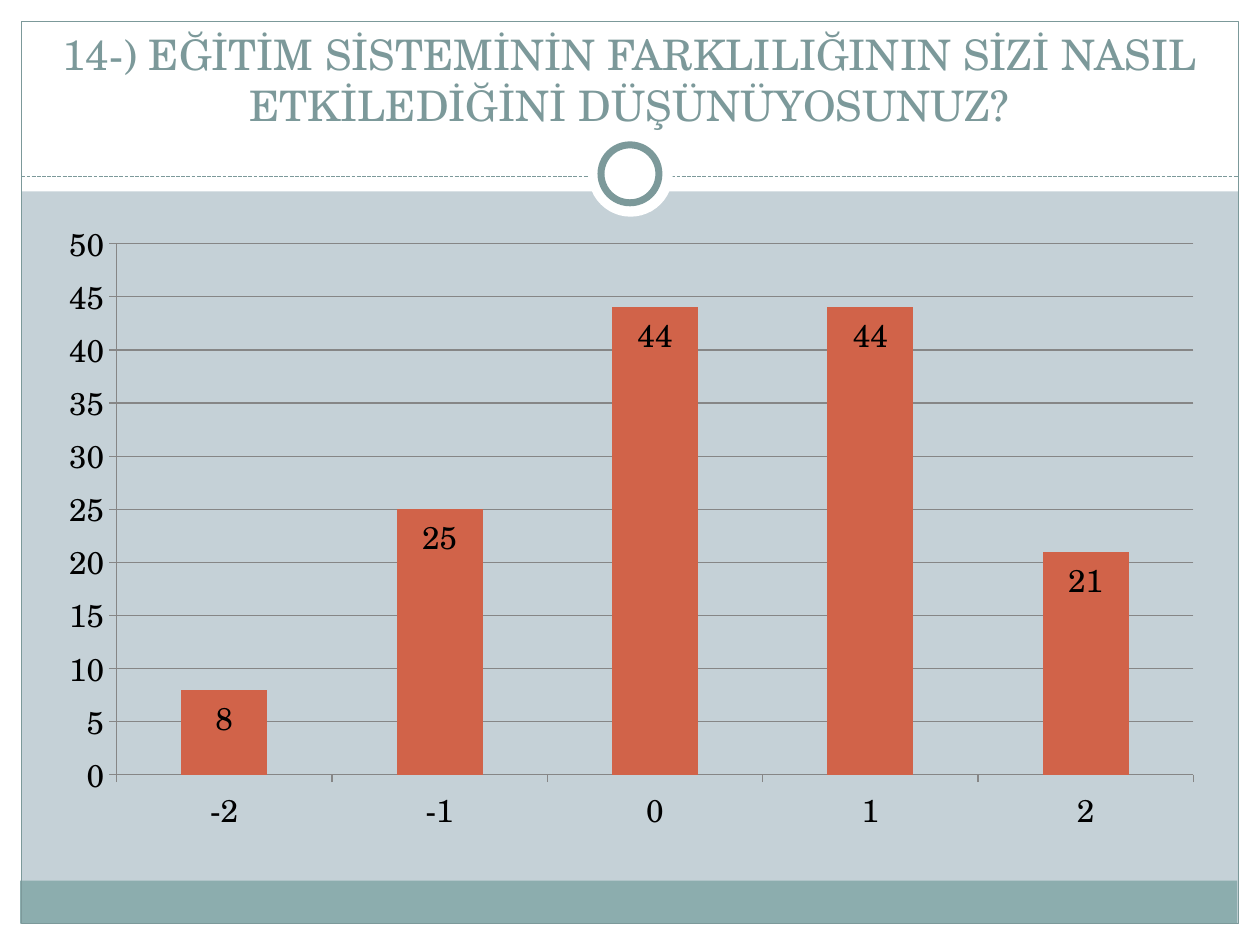
from lxml.etree import SubElement
from pptx import Presentation
from pptx.chart.data import CategoryChartData
from pptx.dml.color import RGBColor
from pptx.enum.chart import XL_CHART_TYPE, XL_LABEL_POSITION, XL_TICK_MARK
from pptx.enum.dml import MSO_LINE
from pptx.enum.shapes import MSO_CONNECTOR, MSO_SHAPE
from pptx.enum.text import MSO_ANCHOR, MSO_AUTO_SIZE, PP_ALIGN
from pptx.oxml import parse_xml
from pptx.oxml.ns import nsdecls, qn
from pptx.util import Pt

PX = 9144  # 100 px to the inch
WIDE, HIGH, EDGE = 1000, 750, 17
FONT = "TeX Gyre Schola"
WHITE = RGBColor(0xFF, 0xFF, 0xFF)
BLACK = RGBColor(0, 0, 0)
BACK = RGBColor(0xC5, 0xD1, 0xD7)
BAND = RGBColor(0x8C, 0xAD, 0xAE)
TEAL = RGBColor(0x7C, 0x99, 0x9A)
RUST = RGBColor(0xD1, 0x63, 0x49)
GRAY = RGBColor(0x86, 0x86, 0x86)

TITLE = ("14-) EĞİTİM SİSTEMİNİN FARKLILIĞININ SİZİ NASIL "
         "ETKİLEDİĞİNİ DÜŞÜNÜYOSUNUZ?")
VOTES = {"-2": 8, "-1": 25, "0": 44, "1": 44, "2": 21}
PLOT = {"x": 0.064, "y": 0.053, "w": 0.919, "h": 0.843}


def emu(*sizes):
    return [size * PX for size in sizes]


def add_form(slide, kind, box, fill=None, line=None, width=0.75):
    form = slide.shapes.add_shape(kind, *emu(*box))
    form.shadow.inherit = False
    if fill is None:
        form.fill.background()
    else:
        form.fill.solid()
        form.fill.fore_color.rgb = fill
    if line is None:
        form.line.fill.background()
    else:
        form.line.color.rgb = line
        form.line.width = Pt(width)


def add_rule(slide, y):
    """Draw the dashed line between the side edges."""
    rule = slide.shapes.add_connector(
        MSO_CONNECTOR.STRAIGHT, *emu(EDGE, y, WIDE - EDGE, y))
    rule.line.color.rgb = TEAL
    rule.line.width = Pt(0.75)
    rule.line.dash_style = MSO_LINE.SQUARE_DOT
    SubElement(rule.element.spPr, qn("a:effectLst"))


def add_frame(slide):
    rect, oval = MSO_SHAPE.RECTANGLE, MSO_SHAPE.OVAL
    inner = WIDE - 2 * EDGE
    edges = [
        (0, HIGH - EDGE, WIDE, EDGE),
        (0, 0, WIDE, 152),
        (0, 0, EDGE, HIGH),
        (WIDE - EDGE, 0, EDGE, HIGH),
    ]
    for box in edges:
        add_form(slide, rect, box, WHITE)
    add_form(slide, rect, (EDGE - 1, 699, inner, 34), BAND)
    add_form(slide, rect, (EDGE, EDGE, inner, HIGH - 2 * EDGE), line=TEAL)
    add_rule(slide, 140)
    add_form(slide, oval, (467, 105, 67, 67), WHITE)
    add_form(slide, oval, (477, 115, 46, 46), WHITE, TEAL, 4)


def set_title(slide):
    title = slide.shapes.title
    title.left, title.top, title.width, title.height = emu(33, 25, 933, 83)
    frame = title.text_frame
    frame.text = TITLE
    frame.word_wrap = True
    frame.auto_size = MSO_AUTO_SIZE.NONE
    frame.vertical_anchor = MSO_ANCHOR.BOTTOM
    line = frame.paragraphs[0]
    line.alignment = PP_ALIGN.CENTER
    line.line_spacing = 1.0
    line.font.name = FONT
    line.font.size = Pt(24)
    line.font.color.rgb = TEAL
    # Bring the title in front of the white bands.
    title.element.getparent().append(title.element)


def set_font(font):
    font.name = FONT
    font.size = Pt(18)
    font.color.rgb = BLACK


def set_plot(chart):
    """Fix the inner plot area by shares of the chart."""
    sizes = "".join(f'<c:{key} val="{share}"/>' for key, share in PLOT.items())
    area = chart.element.find(".//" + qn("c:plotArea"))
    for old in area.findall(qn("c:layout")):
        area.remove(old)
    area.insert(0, parse_xml(
        f'<c:layout {nsdecls("c")}><c:manualLayout>'
        '<c:layoutTarget val="inner"/>'
        '<c:xMode val="edge"/><c:yMode val="edge"/>'
        f'{sizes}</c:manualLayout></c:layout>'))


def add_bars(slide):
    data = CategoryChartData()
    data.categories = list(VOTES)
    data.add_series("Series 1", list(VOTES.values()))
    chart = slide.shapes.add_chart(
        XL_CHART_TYPE.COLUMN_CLUSTERED, *emu(33, 167, 930, 500), data).chart
    chart.has_legend = False
    chart.has_title = False
    set_font(chart.font)
    set_plot(chart)

    scale = chart.value_axis
    scale.minimum_scale, scale.maximum_scale = 0, 50
    scale.major_unit = 5
    scale.has_major_gridlines = True
    lines = [scale.major_gridlines.format.line]
    for axis in (scale, chart.category_axis):
        axis.major_tick_mark = XL_TICK_MARK.OUTSIDE
        axis.minor_tick_mark = XL_TICK_MARK.NONE
        lines.append(axis.format.line)
    for line in lines:
        line.color.rgb = GRAY
        line.width = Pt(0.75)

    plot = chart.plots[0]
    plot.gap_width = 150
    plot.vary_by_categories = False
    bars = plot.series[0]
    bars.format.fill.solid()
    bars.format.fill.fore_color.rgb = RUST
    labels = bars.data_labels
    labels.show_value = True
    labels.position = XL_LABEL_POSITION.INSIDE_END
    set_font(labels.font)


def main():
    deck = Presentation()
    deck.slide_width, deck.slide_height = emu(WIDE, HIGH)
    slide = deck.slides.add_slide(deck.slide_layouts[5])
    slide.background.fill.solid()
    slide.background.fill.fore_color.rgb = BACK
    add_frame(slide)
    set_title(slide)
    add_bars(slide)
    deck.save("out.pptx")


if __name__ == "__main__":
    main()
